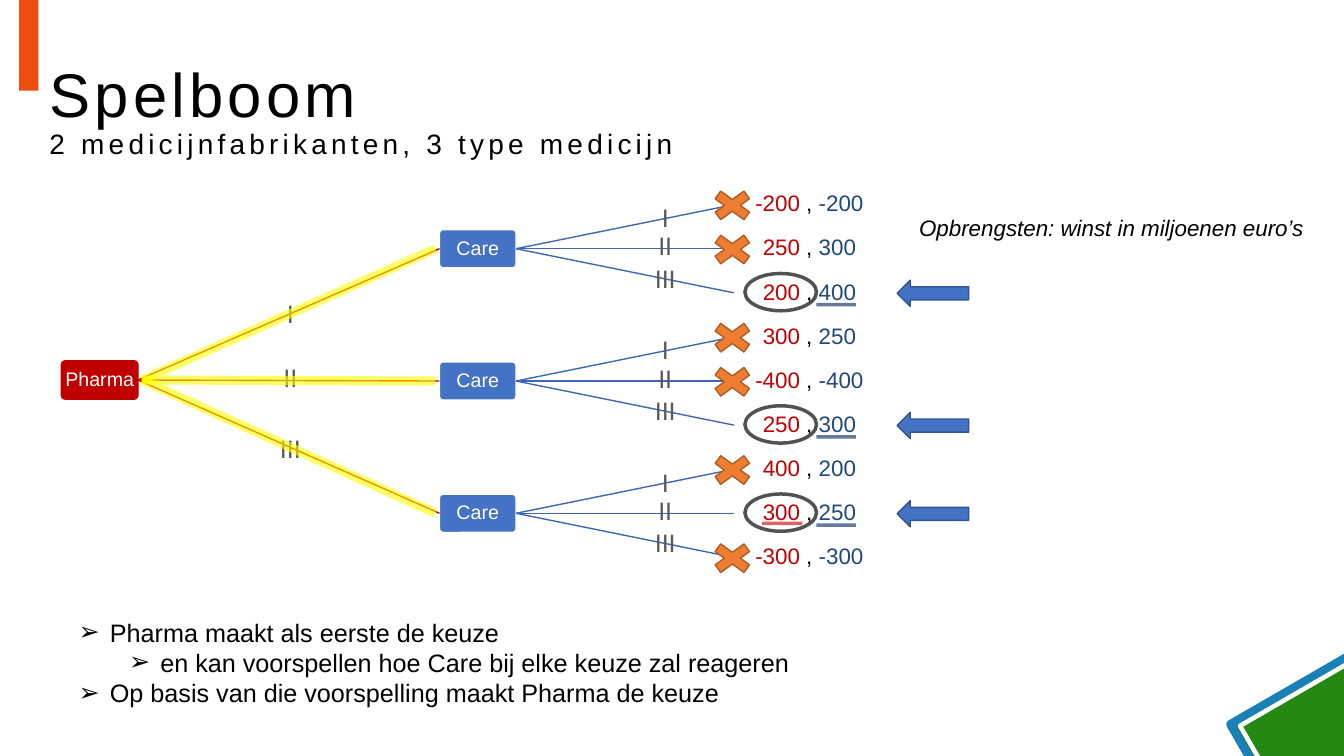
from pptx import Presentation
from pptx.dml.color import RGBColor
from pptx.enum.shapes import MSO_CONNECTOR, MSO_SHAPE
from pptx.enum.text import MSO_ANCHOR, MSO_AUTO_SIZE, PP_ALIGN
from pptx.oxml.ns import qn
from pptx.util import Inches, Pt
from lxml.etree import SubElement

COLORS = {
    "black": "000000", "white": "FFFFFF", "orange": "ED4D0F", "green": "258812",
    "sky": "1A80B6", "pharma": "C00000", "care": "4472C4", "payoff": "1F497D",
    "branch": "3E67B2", "label": "595959", "arrow_edge": "325491", "navy": "002060",
    "cross": "ED7D31", "cross_edge": "AF5C24", "ring": "525252", "yellow": "FFFF00",
}
PAYOFFS = [
    ("-200", "-200"), ("250", "300"), ("200", "400"),
    ("300", "250"), ("-400", "-400"), ("250", "300"),
    ("400", "200"), ("300", "250"), ("-300", "-300"),
]
BEST_REPLIES = [2, 5, 7]
MEDICINES = ["I", "II", "III"]

deck = Presentation()
deck.slide_width, deck.slide_height = Inches(13.333), Inches(7.5)
CELL = deck.slide_height / 90
slide = deck.slides.add_slide(deck.slide_layouts[1])
shapes = slide.shapes


def add_mark(preset, left, top, width, height, fill=None, edge=None, weight=1):
    mark = shapes.add_shape(preset, *[round(n * CELL) for n in (left, top, width, height)])
    mark.shadow.inherit = False
    if fill:
        mark.fill.solid()
        mark.fill.fore_color.rgb = RGBColor.from_string(COLORS[fill])
    else:
        mark.fill.background()
    if edge:
        mark.line.color.rgb = RGBColor.from_string(COLORS[edge])
        mark.line.width = Pt(weight)
    else:
        mark.line.fill.background()
    return mark


def add_stroke(x1, y1, x2, y2, color, weight, opacity=100):
    stroke = shapes.add_connector(MSO_CONNECTOR.STRAIGHT, *[round(n * CELL) for n in (x1, y1, x2, y2)])
    stroke.line.color.rgb = RGBColor.from_string(COLORS[color])
    stroke.line.width = Pt(weight)
    properties = stroke._element.spPr
    SubElement(properties, qn("a:effectLst"))
    if opacity < 100:
        SubElement(properties.find(".//" + qn("a:srgbClr")), qn("a:alpha"), val=str(opacity * 1000))
    return stroke


green_corner = add_mark(MSO_SHAPE.RECTANGLE, 149.76, 80.52, 18, 18, "green", "sky", 6)
white_frame = add_mark(MSO_SHAPE.RECTANGLE, 150.6, 81.24, 16.32, 16.32, None, "white", 3.25)
green_corner.rotation = white_frame.rotation = 60
add_mark(MSO_SHAPE.RECTANGLE, 2.28, 0, 2.28, 10.8, "orange")

texts = []

heading, explanation = shapes.title, slide.placeholders[1]
for holder, area, anchor in [
    (heading, (4.68, 4.68, 151.32, 17.4), MSO_ANCHOR.MIDDLE),
    (explanation, (8.16, 72.84, 137.28, 12.12), MSO_ANCHOR.TOP),
]:
    holder.left, holder.top, holder.width, holder.height = [round(n * CELL) for n in area]
    holder.text_frame.auto_size = MSO_AUTO_SIZE.NONE
    holder.text_frame.vertical_anchor = anchor

title_line = heading.text_frame.paragraphs[0]
title_line.line_spacing = 0.9
texts.append((title_line, PP_ALIGN.LEFT, [("Spelboom", 44, "black")]))
texts.append((title_line, PP_ALIGN.LEFT, [("\v", 44, "black"), ("2 medicijnfabrikanten, 3 type medicijn", 20, "black")]))

for number, (level, sentence) in enumerate([
    (0, "Pharma maakt als eerste de keuze"),
    (1, "en kan voorspellen hoe Care bij elke keuze zal reageren"),
    (0, "Op basis van die voorspelling maakt Pharma de keuze"),
]):
    frame = explanation.text_frame
    point = frame.add_paragraph() if number else frame.paragraphs[0]
    point.level = level
    point.space_before = Pt(0)
    indents = point._p.get_or_add_pPr()
    indents.set("marL", str(Inches(0.31 + 0.5 * level)))
    indents.set("indent", str(-Inches(0.31)))
    SubElement(indents, qn("a:buChar"), char="➢")
    texts.append((point, PP_ALIGN.LEFT, [(sentence, 18, "black")]))

row_centers = [24.36 + 5.25 * row for row in range(len(PAYOFFS))]
care_centers = row_centers[1::3]
pharma_center = 45.24

pharma = add_mark(MSO_SHAPE.ROUNDED_RECTANGLE, 7.32, pharma_center - 2.28, 9.12, 4.56, "pharma", "pharma")
cares = [add_mark(MSO_SHAPE.ROUNDED_RECTANGLE, 52.32, center - 2.28, 9.12, 4.56, "care", "white")
         for center in care_centers]
outcomes = [add_mark(MSO_SHAPE.ROUNDED_RECTANGLE, 87.36, center - 2.28, 18, 4.56, None, "white")
            for center in row_centers]

node_runs = [[("Pharma", 14, "white")]] + [[("Care", 14, "white")]] * 3
node_runs += [[(ours, 16, "pharma"), (" , ", 16, "black"), (theirs, 16, "payoff")]
              for ours, theirs in PAYOFFS]
for node, runs in zip([pharma] + cares + outcomes, node_runs):
    node.adjustments[0] = 0.1
    frame = node.text_frame
    frame.margin_left = frame.margin_right = frame.margin_top = frame.margin_bottom = Inches(0.01)
    frame.vertical_anchor = MSO_ANCHOR.MIDDLE
    frame.paragraphs[0].line_spacing = 0.9
    texts.append((frame.paragraphs[0], PP_ALIGN.CENTER, runs))

branches = [(pharma, care, "pharma") for care in cares]
branches += [(cares[row // 3], outcome, "branch") for row, outcome in enumerate(outcomes)]
for parent, child, color in branches:
    branch = add_stroke(0, 0, 1, 1, color, 1)
    branch.begin_connect(parent, 3)
    branch.end_connect(child, 1)

captions = [(32.1, top, 4.92, 4.8, PP_ALIGN.CENTER, (name, 18, "label"))
            for name, top in zip(MEDICINES, [34.92, 42.6, 51])]
captions += [(76.74, center + shift, 4.92, 4.8, PP_ALIGN.CENTER, (name, 18, "label"))
             for center in care_centers
             for name, shift in zip(MEDICINES, [-6.1, -2.75, 1.1])]
captions.append((108.24, 24.96, 48.72, 4.44, PP_ALIGN.LEFT,
                 ("Opbrengsten: winst in miljoenen euro’s", 16, "black")))
for *area, align, run_data in captions:
    caption = shapes.add_textbox(*[round(n * CELL) for n in area])
    caption.text_frame.word_wrap = False
    line = caption.text_frame.paragraphs[0]
    line.font.italic = align == PP_ALIGN.LEFT
    texts.append((line, align, [run_data]))

for row, center in enumerate(row_centers):
    if row in BEST_REPLIES:
        add_mark(MSO_SHAPE.LEFT_ARROW, 106.8, center - 1.5, 8.52, 3.12, "care", "arrow_edge")
        add_stroke(97.2, center + 1.4, 101.88, center + 1.4, "navy", 2.5, 60)
        add_mark(MSO_SHAPE.OVAL, 88.68, center - 2.3, 8.52, 4.44, None, "ring", 2.5)
    else:
        add_mark(MSO_SHAPE.MATH_MULTIPLY, 83.88, center - 2.3, 6.6, 4.8, "cross", "cross_edge")

best_result = row_centers[7] + 1.2
add_stroke(90.72, best_result, 95.52, best_result, "pharma", 2.5, 60)
for center in care_centers:
    add_stroke(16.9, pharma_center, 51.84, center, "yellow", 6.5, 60)

for paragraph, align, runs in texts:
    paragraph.alignment = align
    for wording, size, color in runs:
        if wording == "\v":
            paragraph.add_line_break()
            continue
        run = paragraph.add_run()
        run.text = wording
        run.font.name = "Arial"
        run.font.size = Pt(size)
        run.font.color.rgb = RGBColor.from_string(COLORS[color])
        if paragraph is title_line:
            run._r.get_or_add_rPr().set("spc", "300")
        if paragraph.font.italic:
            run.font.italic = True

deck.save("out.pptx")
